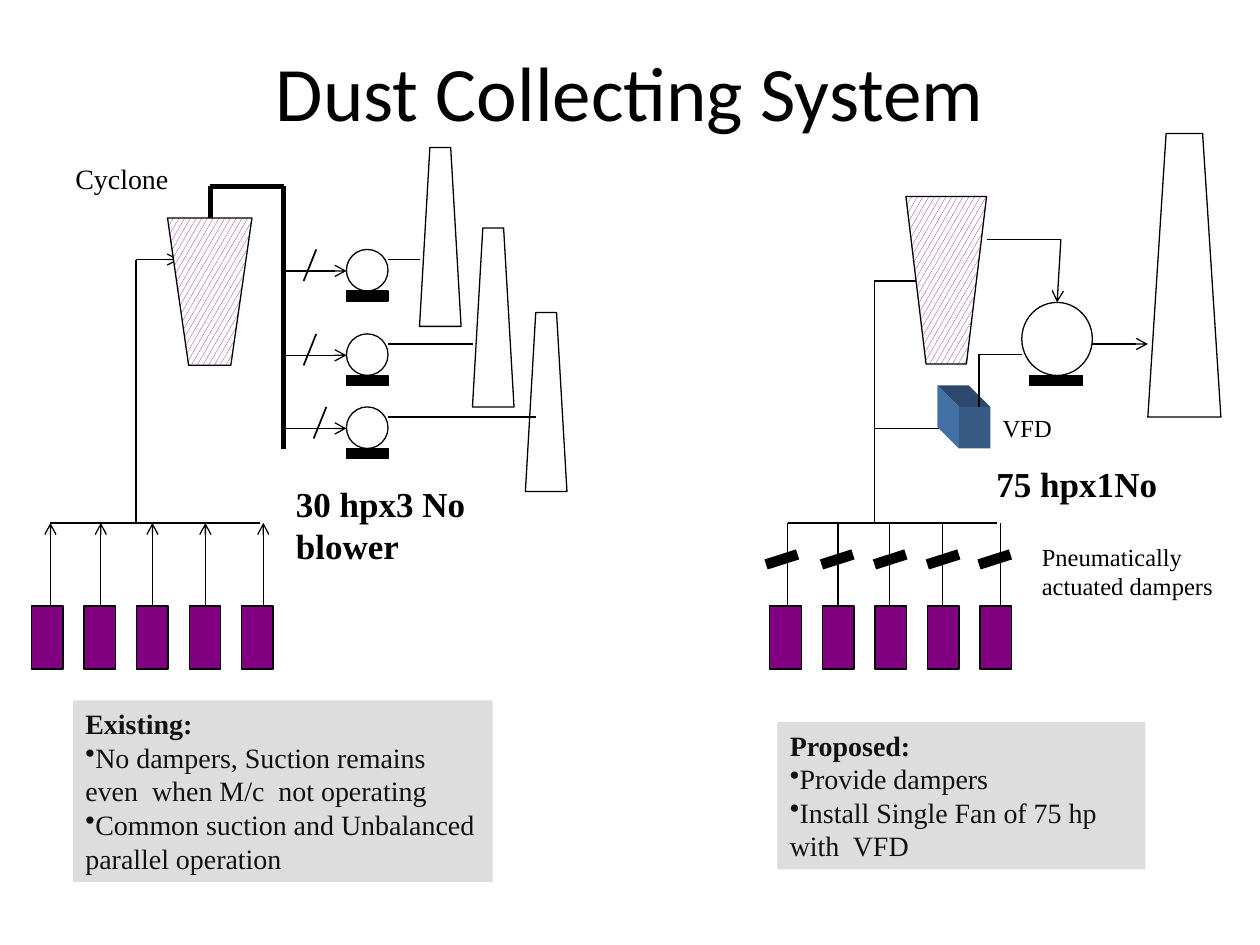
from lxml.etree import SubElement
from pptx import Presentation
from pptx.dml.color import RGBColor
from pptx.enum.dml import MSO_PATTERN
from pptx.enum.shapes import MSO_CONNECTOR, MSO_SHAPE
from pptx.enum.text import MSO_ANCHOR, PP_ALIGN
from pptx.oxml.ns import qn
from pptx.util import Inches, Pt

BLACK = RGBColor(0, 0, 0)
WHITE = RGBColor(255, 255, 255)
PURPLE = RGBColor(0x80, 0, 0x80)
GRAY = RGBColor(0xDD, 0xDD, 0xDD)
INK = RGBColor(0x11, 0x11, 0x11)
VFD_FRONT = RGBColor(0x38, 0x5A, 0x84)
VFD_TOP = RGBColor(0x2C, 0x48, 0x6C)
VFD_SIDE = RGBColor(0x43, 0x70, 0xA5)
SERIF = "Times New Roman"
MACHINE_PITCH = 0.417
DROP_OFFSETS = (0, 0.4, 0.81, 1.23, 1.69)
HEADER_Y = 4.15
MACHINE_Y = 4.81


def paint(shape, fill, outlined=True):
    shape.shadow.inherit = False
    shape.fill.solid()
    shape.fill.fore_color.rgb = fill
    if outlined:
        shape.line.color.rgb = BLACK
        shape.line.width = Pt(0.75)
    else:
        shape.line.fill.background()


def add_preset(page, kind, left, top, width, height, fill, outlined=True):
    shape = page.shapes.add_shape(
        kind, Inches(left), Inches(top), Inches(width), Inches(height))
    paint(shape, fill, outlined)
    return shape


def add_outline(page, points, fill, outlined=True):
    corners = [(Inches(x), Inches(y)) for x, y in points]
    builder = page.shapes.build_freeform(*corners[0], scale=1.0)
    builder.add_line_segments(corners[1:], close=True)
    shape = builder.convert_to_shape()
    paint(shape, fill, outlined)
    return shape


def add_line(page, start, end, width=0.75, arrow=False):
    line = page.shapes.add_connector(
        MSO_CONNECTOR.STRAIGHT, *(Inches(value) for value in (*start, *end)))
    line.line.color.rgb = BLACK
    line.line.width = Pt(width)
    if arrow:
        SubElement(line.line._get_or_add_ln(), qn("a:tailEnd"), type="arrow")
    SubElement(line._element.spPr, qn("a:effectLst"))


def add_path(page, points, width=0.75, arrow=False):
    last = len(points) - 2
    for index, (start, end) in enumerate(zip(points, points[1:])):
        add_line(page, start, end, width, arrow and index == last)


def add_stack(page, left, top, width, height):
    right, bottom, inset = left + width, top + height, width / 4
    add_outline(page, [(left, bottom), (left + inset, top),
                       (right - inset, top), (right, bottom)], WHITE)


def add_cyclone(page, left, top, width, height):
    right, bottom, inset = left + width, top + height, width / 4
    cyclone = add_outline(page, [(left, top), (left + inset, bottom),
                                 (right - inset, bottom), (right, top)], WHITE)
    cyclone.fill.patterned()
    cyclone.fill.pattern = MSO_PATTERN.LARGE_CONFETTI
    cyclone.fill.fore_color.rgb = PURPLE
    cyclone.fill.back_color.rgb = WHITE


def add_fan(page, left, top, width, height, base_left, base_width):
    add_preset(page, MSO_SHAPE.OVAL, left, top, width, height, WHITE)
    add_preset(page, MSO_SHAPE.RECTANGLE, base_left, top + height,
               base_width, 0.08, BLACK)


def add_machines(page, left, first_drop, arrow):
    for index, offset in enumerate(DROP_OFFSETS):
        add_preset(page, MSO_SHAPE.RECTANGLE, left + index * MACHINE_PITCH,
                   MACHINE_Y, 0.25, 0.5, PURPLE)
        drop = first_drop + offset
        add_line(page, (drop, MACHINE_Y), (drop, HEADER_Y), arrow=arrow)
    add_line(page, (first_drop, HEADER_Y), (first_drop + 1.66, HEADER_Y))


def add_span(para, text, size, color=BLACK, bold=False, font=SERIF):
    span = para.add_run()
    span.text = text
    span.font.name = font
    span.font.size = Pt(size)
    span.font.bold = bold
    span.font.color.rgb = color


def add_label(page, left, top, width, height, lines, size, bold=False, wrap=False):
    box = page.shapes.add_textbox(
        Inches(left), Inches(top), Inches(width), Inches(height))
    frame = box.text_frame
    frame.word_wrap = wrap
    for index, text in enumerate(lines):
        para = frame.add_paragraph() if index else frame.paragraphs[0]
        add_span(para, text, size, bold=bold)
    return box


def add_note(page, left, top, width, height, heading, points):
    box = add_preset(page, MSO_SHAPE.RECTANGLE, left, top, width, height,
                     GRAY, outlined=False)
    frame = box.text_frame
    frame.word_wrap = True
    frame.vertical_anchor = MSO_ANCHOR.TOP
    para = frame.paragraphs[0]
    para.alignment = PP_ALIGN.LEFT
    add_span(para, heading, 16, INK, bold=True)
    for text in points:
        para = frame.add_paragraph()
        para.alignment = PP_ALIGN.LEFT
        SubElement(para._p.get_or_add_pPr(), qn("a:buChar"), char="•")
        add_span(para, text, 16, INK)


def add_title(page, text):
    title = page.shapes.title
    title.left, title.top = Inches(0.5), Inches(0.12)
    title.width, title.height = Inches(9), Inches(1.2)
    title.text_frame.vertical_anchor = MSO_ANCHOR.MIDDLE
    para = title.text_frame.paragraphs[0]
    para.alignment = PP_ALIGN.CENTER
    add_span(para, text, 44, font="Calibri")


def add_existing_system(page):
    add_machines(page, 0.25, 0.4, arrow=True)
    add_path(page, [(1.08, HEADER_Y), (1.08, 2.06), (1.42, 2.06)], arrow=True)
    add_cyclone(page, 1.33, 1.73, 0.67, 1.17)
    add_path(page, [(1.67, 1.73), (1.67, 1.48), (2.25, 1.48), (2.25, 3.56)], 3)
    for left, top in ((3.33, 1.17), (3.75, 1.81), (4.17, 2.48)):
        add_stack(page, left, top, 0.33, 1.42)
    for top, outlet, slash in ((1.98, 3.33, 2.41), (2.65, 3.75, 2.41),
                               (3.23, 4.25, 2.49)):
        add_line(page, (2.25, top + 0.17), (2.75, top + 0.17), arrow=True)
        add_line(page, (slash, top + 0.25), (slash + 0.1, top), 1)
        add_fan(page, 2.75, top, 0.33, 0.33, 2.75, 0.33)
        add_line(page, (3.08, top + 0.08), (outlet, top + 0.08))
    add_label(page, 0.5, 1.23, 1.08, 0.37, ["Cyclone"], 16, wrap=True)
    add_label(page, 2.25, 3.78, 2.43, 0.43, ["30 hpx3 No blower"], 20, bold=True)
    add_note(page, 0.58, 5.56, 3.33, 1.44, "Existing:",
             ["No dampers, Suction remains even  when M/c  not operating",
              "Common suction and Unbalanced parallel operation"])


def add_drive(page):
    left, top, right, bottom, depth = 7.61, 3.23, 7.86, 3.56, 0.17
    back_left, back_top = left - depth, top - depth
    add_outline(page, [(left, top), (right, top), (right - depth, back_top),
                       (back_left, back_top)], VFD_TOP, outlined=False)
    add_outline(page, [(left, top), (left, bottom), (back_left, bottom - depth),
                       (back_left, back_top)], VFD_SIDE, outlined=False)
    add_preset(page, MSO_SHAPE.RECTANGLE, left, top, right - left,
               bottom - top, VFD_FRONT, outlined=False)


def add_proposed_system(page):
    add_machines(page, 6.11, 6.25, arrow=False)
    for left in (6.08, 6.52, 6.94, 7.36, 7.77):
        add_line(page, (left, 4.48), (left + 0.25, 4.4), 6)
    add_path(page, [(6.94, HEADER_Y), (6.94, 2.23), (7.27, 2.23)])
    add_cyclone(page, 7.19, 1.56, 0.64, 1.33)
    add_fan(page, 8.11, 2.4, 0.56, 0.58, 8.17, 0.42)
    add_path(page, [(7.83, 1.9), (8.42, 1.9), (8.39, 2.4)], arrow=True)
    add_line(page, (8.67, 2.73), (9.11, 2.73), arrow=True)
    add_stack(page, 9.11, 1.06, 0.58, 2.25)
    add_line(page, (6.94, 3.4), (7.61, 3.4))
    add_drive(page)
    add_line(page, (7.77, 3.23), (7.77, 2.81))
    add_line(page, (7.77, 2.81), (8.11, 2.81), 0.25)
    add_label(page, 7.86, 3.23, 0.73, 0.33, ["VFD"], 14, wrap=True)
    add_label(page, 7.81, 3.62, 1.48, 0.43, ["75 hpx1No"], 20, bold=True)
    add_label(page, 8.17, 4.25, 1.56, 0.57,
              ["Pneumatically", "actuated dampers"], 14)
    add_note(page, 6.17, 5.73, 2.92, 1.17, "Proposed:",
             ["Provide dampers", "Install Single Fan of 75 hp with  VFD"])


def main():
    deck = Presentation()
    deck.slide_width, deck.slide_height = Inches(10), Inches(7.5)
    page = deck.slides.add_slide(deck.slide_layouts[5])
    add_title(page, "Dust Collecting System")
    add_existing_system(page)
    add_proposed_system(page)
    deck.save("out.pptx")


if __name__ == "__main__":
    main()
